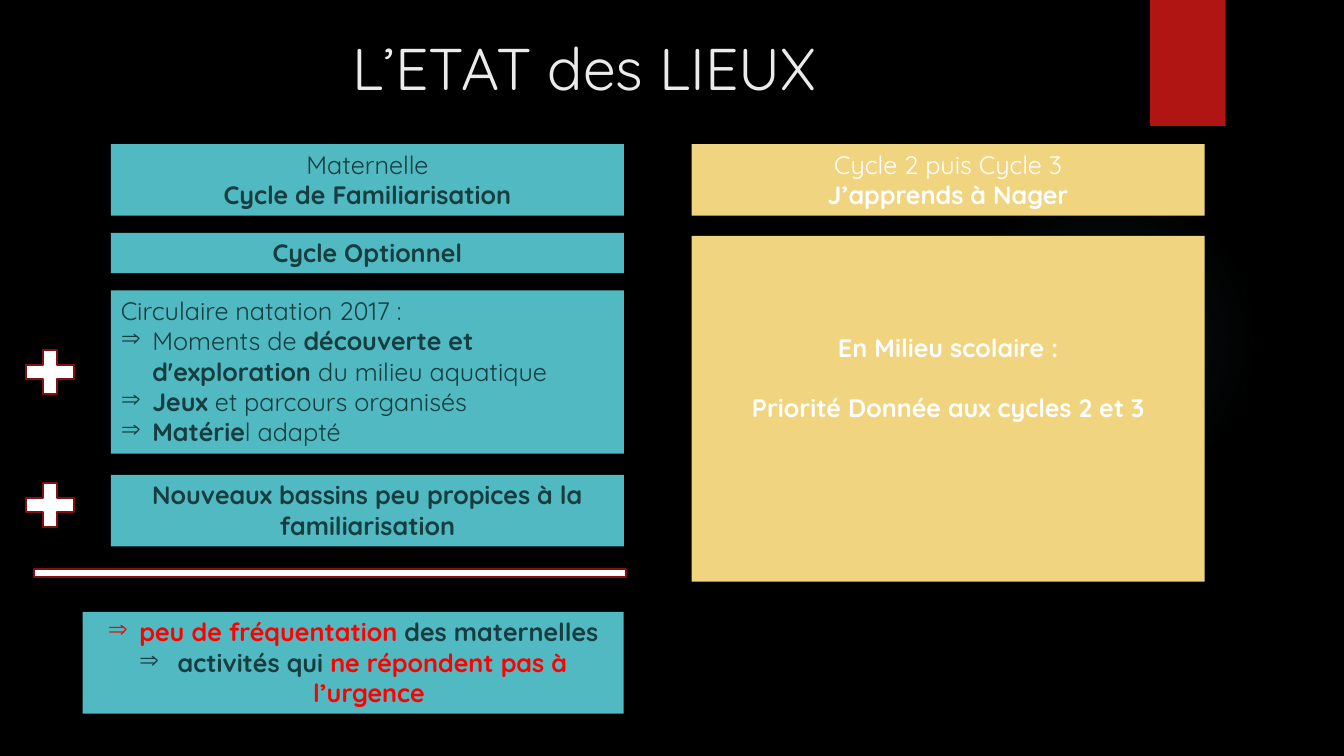
from lxml.etree import SubElement
from pptx import Presentation
from pptx.dml.color import RGBColor
from pptx.enum.shapes import MSO_SHAPE
from pptx.enum.text import MSO_ANCHOR, PP_ALIGN
from pptx.oxml import parse_xml
from pptx.oxml.ns import nsdecls, qn
from pptx.util import Pt

BLACK = RGBColor(0x00, 0x00, 0x00)
WHITE = RGBColor(0xFF, 0xFF, 0xFF)
TITLE_GREY = RGBColor(0xEB, 0xEB, 0xEB)
TEAL = RGBColor(0x50, 0xB9, 0xC1)
DARK_TEAL = RGBColor(0x17, 0x3D, 0x40)
SAND = RGBColor(0xF0, 0xD4, 0x7F)
RED = RGBColor(0xFF, 0x00, 0x00)
TAB_RED = RGBColor(0xB0, 0x15, 0x13)
LINE_RED = RGBColor(0x82, 0x10, 0x0E)

LEFT, RIGHT, COLUMN_WIDTH = 79.2, 494, 366.5
TWO_LINES = 51.1
HEADER_TOP = 103


class SlideBuilder:
    font_name = "Quicksand"
    text_size = 18
    bullet_indent = 22.5

    def __init__(self, slide):
        self.slide = slide

    def shape(self, kind, box, fill, line=None):
        shape = self.slide.shapes.add_shape(kind, *map(Pt, box))
        shape.shadow.inherit = False
        shape.fill.solid()
        shape.fill.fore_color.rgb = fill
        if line is None:
            shape.line.fill.background()
        else:
            shape.line.color.rgb = line
            shape.line.width = Pt(1.5)
        return shape

    def glow(self, box, color):
        """Draw a circle that fades out from its centre."""
        shape = self.shape(MSO_SHAPE.OVAL, box, color)
        stops = "".join(
            f'<a:gs pos="{position * 1000}"><a:srgbClr val="{color}">'
            f'<a:alpha val="{alpha * 1000}"/></a:srgbClr></a:gs>'
            for position, alpha in ((0, 7), (36, 6), (69, 0)))
        gradient = parse_xml(
            f'<a:gradFill {nsdecls("a")}><a:gsLst>{stops}</a:gsLst>'
            '<a:path path="circle"><a:fillToRect l="50000" t="50000" '
            'r="50000" b="50000"/></a:path></a:gradFill>')
        properties = shape.element.spPr
        properties.replace(properties.find(qn("a:solidFill")), gradient)

    def text(self, frame, paragraphs, color, size=text_size,
             align=PP_ALIGN.CENTER, bulleted=(), gap=0):
        """Fill a frame; each run is (text, bold) or (text, bold, color)."""
        frame.word_wrap = True
        frame.vertical_anchor = MSO_ANCHOR.TOP
        for index, runs in enumerate(paragraphs):
            paragraph = frame.add_paragraph() if index else frame.paragraphs[0]
            paragraph.alignment = align
            if index and gap:
                paragraph.space_before = Pt(gap)
            if index in bulleted:
                self.bullet(paragraph)
            for words, bold, *own_color in runs:
                run = paragraph.add_run()
                run.text = words
                run.font.name = self.font_name
                run.font.size = Pt(size)
                run.font.bold = bold
                run.font.color.rgb = own_color[0] if own_color else color

    def bullet(self, paragraph):
        properties = paragraph._p.get_or_add_pPr()
        indent = Pt(self.bullet_indent)
        properties.set("marL", str(indent))
        properties.set("indent", str(-indent))
        SubElement(properties, qn("a:buChar")).set("char", "⇒")

    def title(self, box, words):
        frame = self.slide.shapes.add_textbox(*map(Pt, box)).text_frame
        self.text(frame, [[(words, False)]], TITLE_GREY, size=42)

    def panel(self, box, fill, color, paragraphs, top_inset=3.6, **style):
        frame = self.shape(MSO_SHAPE.RECTANGLE, box, fill).text_frame
        frame.margin_top = Pt(top_inset)
        self.text(frame, paragraphs, color, **style)


def main():
    presentation = Presentation()
    presentation.slide_width, presentation.slide_height = Pt(960), Pt(540)
    slide = presentation.slides.add_slide(presentation.slide_layouts[6])
    slide.background.fill.solid()
    slide.background.fill.fore_color.rgb = BLACK
    builder = SlideBuilder(slide)

    builder.glow((677.5, 131.8, 221.8, 221.8), TEAL)
    builder.shape(MSO_SHAPE.RECTANGLE, (821.5, 0, 54, 90), TAB_RED)
    builder.title((46.8, 19.4, 740.9, 65.5), "L’ETAT des LIEUX")

    for left, fill, color, level, cycle in (
            (LEFT, TEAL, DARK_TEAL, "Maternelle", "Cycle de Familiarisation"),
            (RIGHT, SAND, WHITE, "Cycle 2 puis Cycle 3", "J’apprends à Nager")):
        builder.panel((left, HEADER_TOP, COLUMN_WIDTH, TWO_LINES), fill, color,
                      [[(level, False)], [(cycle, True)]])

    builder.panel((LEFT, 207.4, COLUMN_WIDTH, 116.6), TEAL, DARK_TEAL, [
        [("Circulaire natation 2017 :", False)],
        [("Moments de ", False), ("découverte et d'exploration ", True),
         ("du milieu aquatique", False)],
        [("Jeux", True), (" et parcours organisés", False)],
        [("Matérie", True), ("l adapté", False)],
    ], align=PP_ALIGN.LEFT, bulleted=(1, 2, 3))

    for top, height, words in (
            (166.3, 28.8, "Cycle Optionnel"),
            (339.1, TWO_LINES,
             "Nouveaux bassins peu propices à la familiarisation")):
        builder.panel((LEFT, top, COLUMN_WIDTH, height), TEAL, DARK_TEAL,
                      [[(words, True)]])

    builder.panel((RIGHT, 168.5, COLUMN_WIDTH, 247), SAND, WHITE, [
        [("En Milieu scolaire :", True)],
        [("Priorité Donnée aux cycles 2 et 3", True)],
    ], top_inset=68.6, gap=21.6)

    builder.panel((59, 437, 386.6, 72.7), TEAL, DARK_TEAL, [
        [("peu de fréquentation ", True, RED), ("des maternelles", True)],
        [(" activités qui ", True),
         ("ne répondent pas à l’urgence", True, RED)],
    ], bulleted=(0, 1))

    for top in (244.1, 339.1):
        builder.shape(MSO_SHAPE.MATH_PLUS, (12.2, top, 46.8, 43.2),
                      WHITE, LINE_RED)
    builder.shape(MSO_SHAPE.MATH_MINUS, (-51.8, 396.7, 575.3, 25.2),
                  WHITE, LINE_RED)

    presentation.save("out.pptx")


if __name__ == "__main__":
    main()
